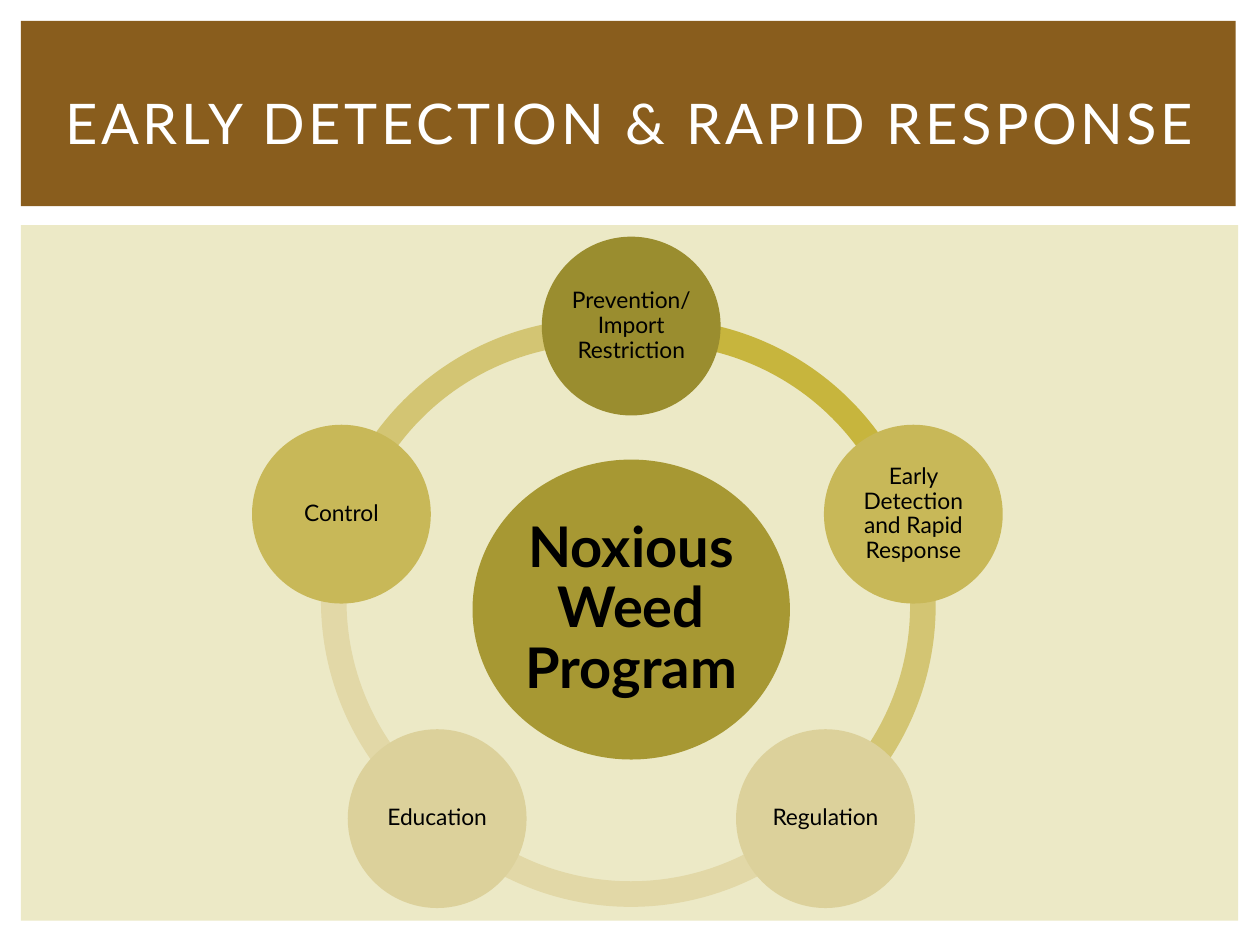
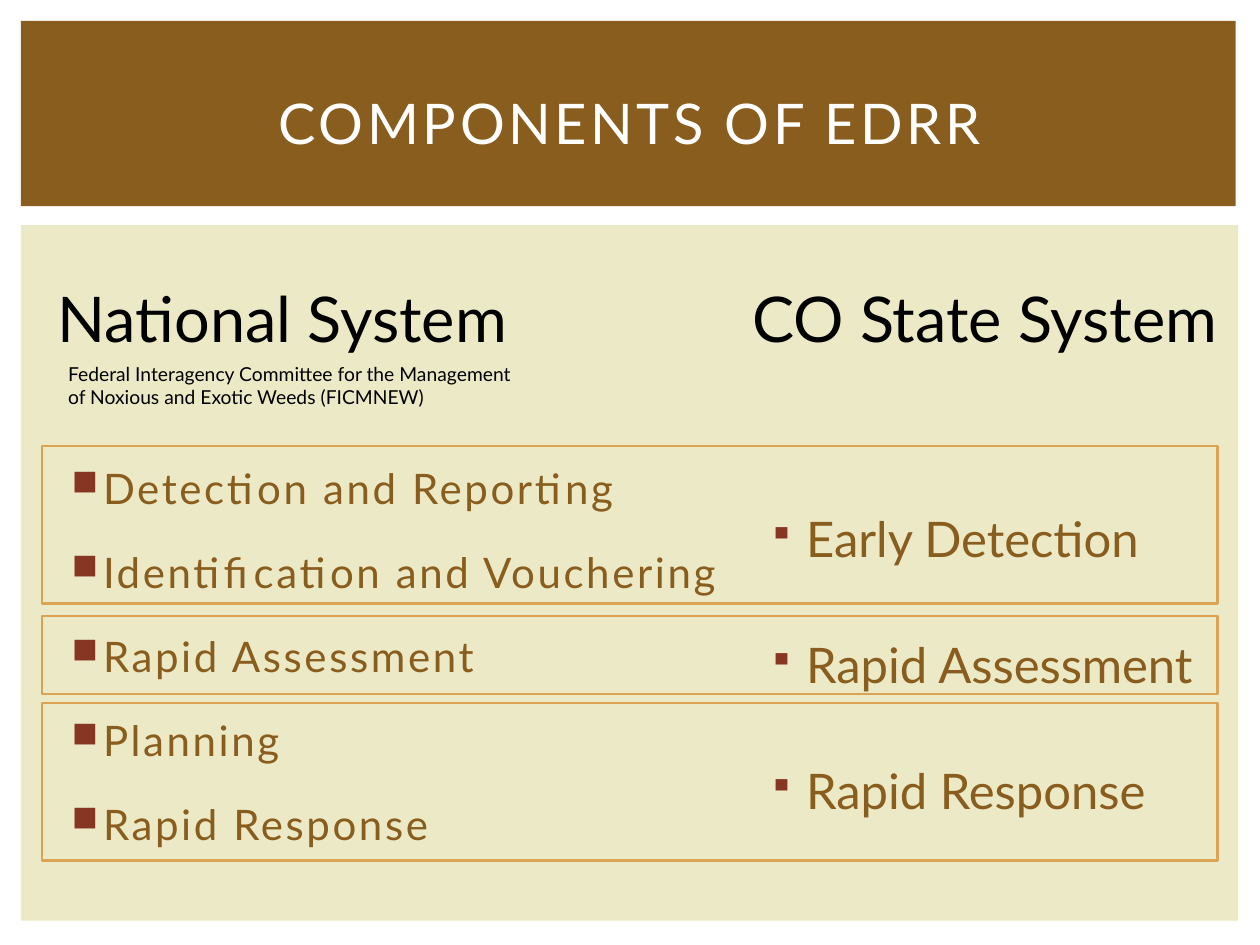
import pptx
import pptx.dml.color
import pptx.enum.shapes
import pptx.enum.text
import pptx.oxml
import pptx.oxml.ns
import pptx.util

Pt = pptx.util.Pt
SHAPE = pptx.enum.shapes.MSO_SHAPE
ANCHOR = pptx.enum.text.MSO_ANCHOR
CENTER = pptx.enum.text.PP_ALIGN.CENTER
FONT = "Lato"
BROWN, CREAM, RUST, AMBER = "895D1D", "ECE9C6", "873624", "DBA455"
WHITE, BLACK = "FFFFFF", "000000"
PANEL = (12, 128.7, 695.52, 397.44)
BAND = (12, 12, 694.08, 105.84)
TITLE = (30, 28.08, 660.24, 82.8)


def color(value):
    """Turn a hex string into a colour."""
    return pptx.dml.color.RGBColor.from_string(value)


def inside(region, left, top, width, height):
    """Shift a box given relative to a region onto the page."""
    return region[0] + left, region[1] + top, width, height


def add_shape(page, kind, box, fill=None, line=None):
    """Add a flat preset shape with an optional fill and outline."""
    shape = page.shapes.add_shape(kind, *map(Pt, box))
    shape.shadow.inherit = False
    if fill:
        shape.fill.solid()
        shape.fill.fore_color.rgb = color(fill)
    else:
        shape.fill.background()
    if line:
        shape.line.color.rgb = color(line)
        shape.line.width = Pt(1.5)
    else:
        shape.line.fill.background()
    return shape


def style(para, size, ink, bold=False, tracking=0):
    """Format every run of a paragraph."""
    for span in para.runs:
        span.font.name = FONT
        span.font.size = Pt(size)
        span.font.bold = bold
        span.font.color.rgb = color(ink)
        if tracking:
            span.font._element.set("spc", str(round(tracking * 100)))


def add_property(para, xml):
    """Append one drawing element to the paragraph properties."""
    namespace = pptx.oxml.ns.nsdecls("a")
    element = pptx.oxml.parse_xml(xml.replace(" ", f" {namespace} ", 1))
    para._p.get_or_add_pPr().append(element)


def add_text(page, box, text):
    """Add a wrapping text box and return its paragraphs."""
    frame = page.shapes.add_textbox(*map(Pt, box)).text_frame
    frame.word_wrap = True
    frame.text = text
    return frame.paragraphs


def add_bullets(page, box, lines, size, mark, percent, hanging, tracking=0):
    """Add a list with coloured square bullets."""
    for index, para in enumerate(add_text(page, box, "\n".join(lines))):
        properties = para._p.get_or_add_pPr()
        properties.set("marL", str(Pt(21.6)))
        properties.set("indent", str(-Pt(hanging)))
        add_property(para, f'<a:buClr ><a:srgbClr val="{RUST}"/></a:buClr>')
        add_property(para, f'<a:buSzPct val="{percent * 1000}"/>')
        add_property(para, f'<a:buChar char="{mark}"/>')
        para.line_spacing = 1.5
        if index:
            para.space_before = Pt(size * 0.2)
        style(para, size, BROWN, tracking=tracking)


def add_backdrop(page, layout):
    """Place the panel and the title band on the shared layout."""
    for index, (box, fill) in enumerate(((PANEL, CREAM), (BAND, BROWN))):
        shape = add_shape(page, SHAPE.RECTANGLE, box, fill)
        layout.shapes._spTree.insert(2 + index, shape._element)


def add_page(deck, layout, text):
    """Add a page with its centred title."""
    page = deck.slides.add_slide(layout)
    title = page.shapes.title
    title.left, title.top, title.width, title.height = map(Pt, TITLE)
    frame = title.text_frame
    frame.text = text
    frame.word_wrap = True
    frame.auto_size = pptx.enum.text.MSO_AUTO_SIZE.NONE
    frame.vertical_anchor = ANCHOR.MIDDLE
    frame.margin_left = frame.margin_right = Pt(4)
    frame.paragraphs[0].alignment = CENTER
    style(frame.paragraphs[0], 32, WHITE, tracking=2)
    return page


def add_disc(page, box, text, fill, size, margin, bold=False):
    """Add an ellipse with a centred label."""
    frame = add_shape(page, SHAPE.OVAL, box, fill).text_frame
    frame.margin_left = frame.margin_right = Pt(margin)
    frame.margin_top = frame.margin_bottom = Pt(margin)
    frame.word_wrap = True
    frame.vertical_anchor = ANCHOR.MIDDLE
    frame.text = text
    para = frame.paragraphs[0]
    para.alignment = CENTER
    para.line_spacing = 0.9
    style(para, size, BLACK, bold)


def add_cycle(page, region):
    """Draw the ring of program parts around the central disc."""
    arcs = (
        (172.1, 53.3, 118.54, 165.9, "D3C573"),
        (171.4, 55.4, 75.99, 119.04, "E2D8A7"),
        (189.4, 71.3, 26.63, 81.37, "E2D8A7"),
        (204.5, 58.3, 204.28, 30.96, "D3C573"),
        (202.3, 53.3, 159.13, 205.36, "C7B53D"),
    )
    for left, top, start, end, fill in arcs:
        arc = add_shape(page, SHAPE.BLOCK_ARC, inside(region, left, top, 318.2, 318.2), fill)
        for index, value in enumerate((start, end, 0.046)):
            arc.adjustments[index] = value
    add_disc(page, inside(region, 258, 133.9, 181.4, 171.4),
             "Noxious Weed Program", "A79833", 32, 2.9, True)
    parts = (
        (297.6, 6.5, "Prevention/ Import Restriction", "9A8D2F"),
        (458.8, 114, "Early Detection and Rapid Response", "C8B858"),
        (408.6, 288, "Regulation", "DCD19B"),
        (186.7, 288, "Education", "DCD19B"),
        (132, 114, "Control", "C8B858"),
    )
    for left, top, text, fill in parts:
        add_disc(page, inside(region, left, top, 102.2, 102.2), text, fill, 13, 1.2)


def add_comparison(page, region):
    """Set the national steps beside the matching state steps."""
    heading = add_text(page, inside(region, 13.9, 27.5, 681.8, 51.1),
                       "National System\tCO State System")[0]
    add_property(heading, f'<a:tabLst ><a:tab pos="{Pt(397)}" algn="l"/></a:tabLst>')
    style(heading, 36, BLACK)
    national = ("Detection and Reporting", "Identification and Vouchering",
                "Rapid Assessment", "Planning", "Rapid Response")
    add_bullets(page, inside(region, 18.2, 117.4, 390.2, 270), national, 24, "■", 85, 18, 1.5)
    state = ("Early Detection", "Rapid Assessment", "Rapid Response")
    for index, step in enumerate(state):
        box = inside(region, 420, 141.3 + 72 * index, 275.8, 54)
        add_bullets(page, box, (step,), 28, "▪", 72, 24)
    for top, height in ((126.1, 90), (223.3, 44.6), (273, 90)):
        add_shape(page, SHAPE.RECTANGLE, inside(region, 12, top, 671.8, height), line=AMBER)
    note = add_text(page, inside(region, 19.8, 75, 267.8, 33.8),
                    "Federal Interagency Committee for the Management "
                    "of Noxious and Exotic Weeds (FICMNEW)")[0]
    style(note, 11, BLACK)


def main():
    """Build and save the deck."""
    deck = pptx.Presentation()
    deck.slide_width, deck.slide_height = Pt(720), Pt(540)
    layout = deck.slide_layouts.get_by_name("Title Only")
    cycle = add_page(deck, layout, "EARLY DETECTION & RAPID RESPONSE")
    add_backdrop(cycle, layout)
    add_cycle(cycle, PANEL)
    components = add_page(deck, layout, "COMPONENTS OF EDRR")
    add_comparison(components, PANEL)
    deck.save("out.pptx")


if __name__ == "__main__":
    main()
